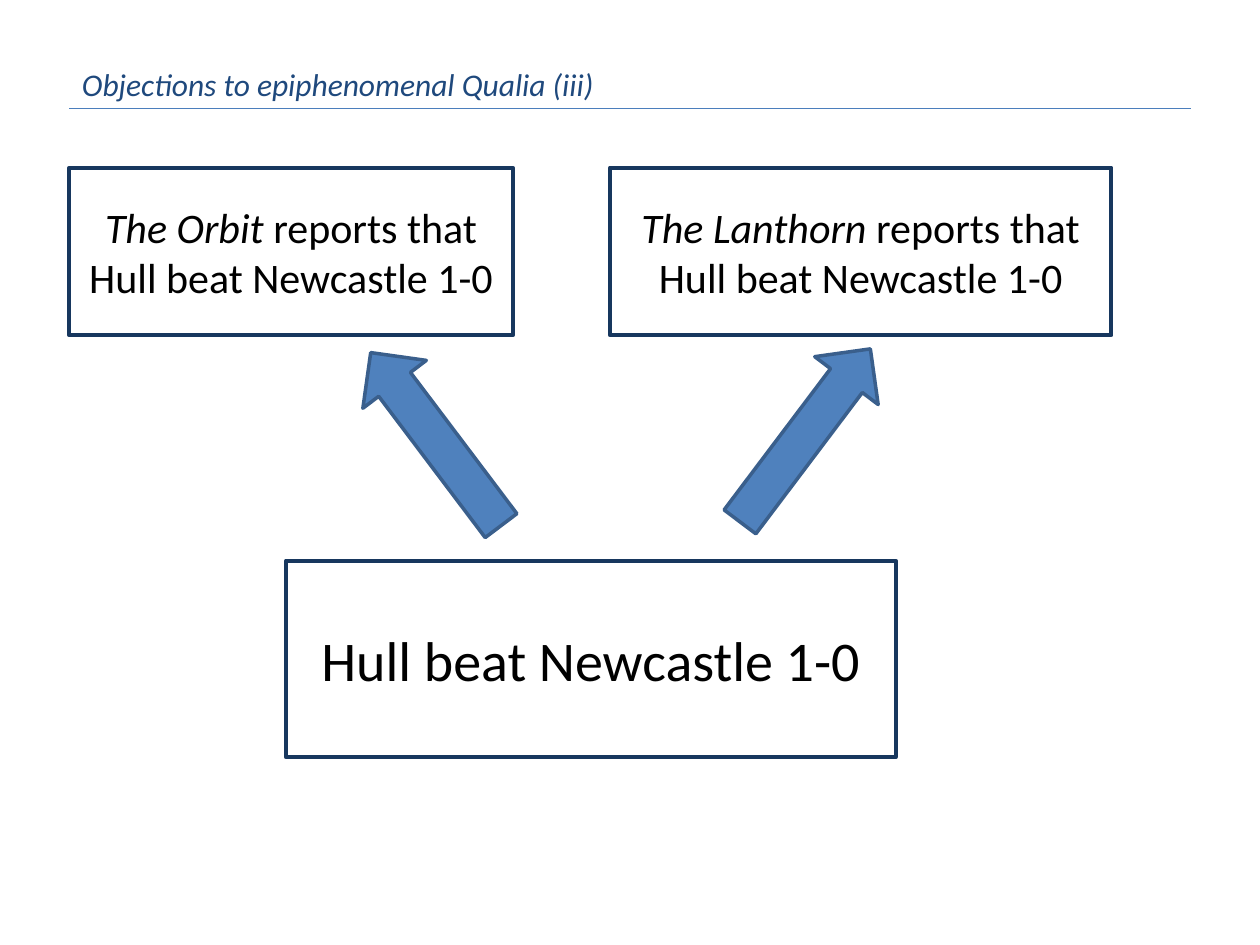
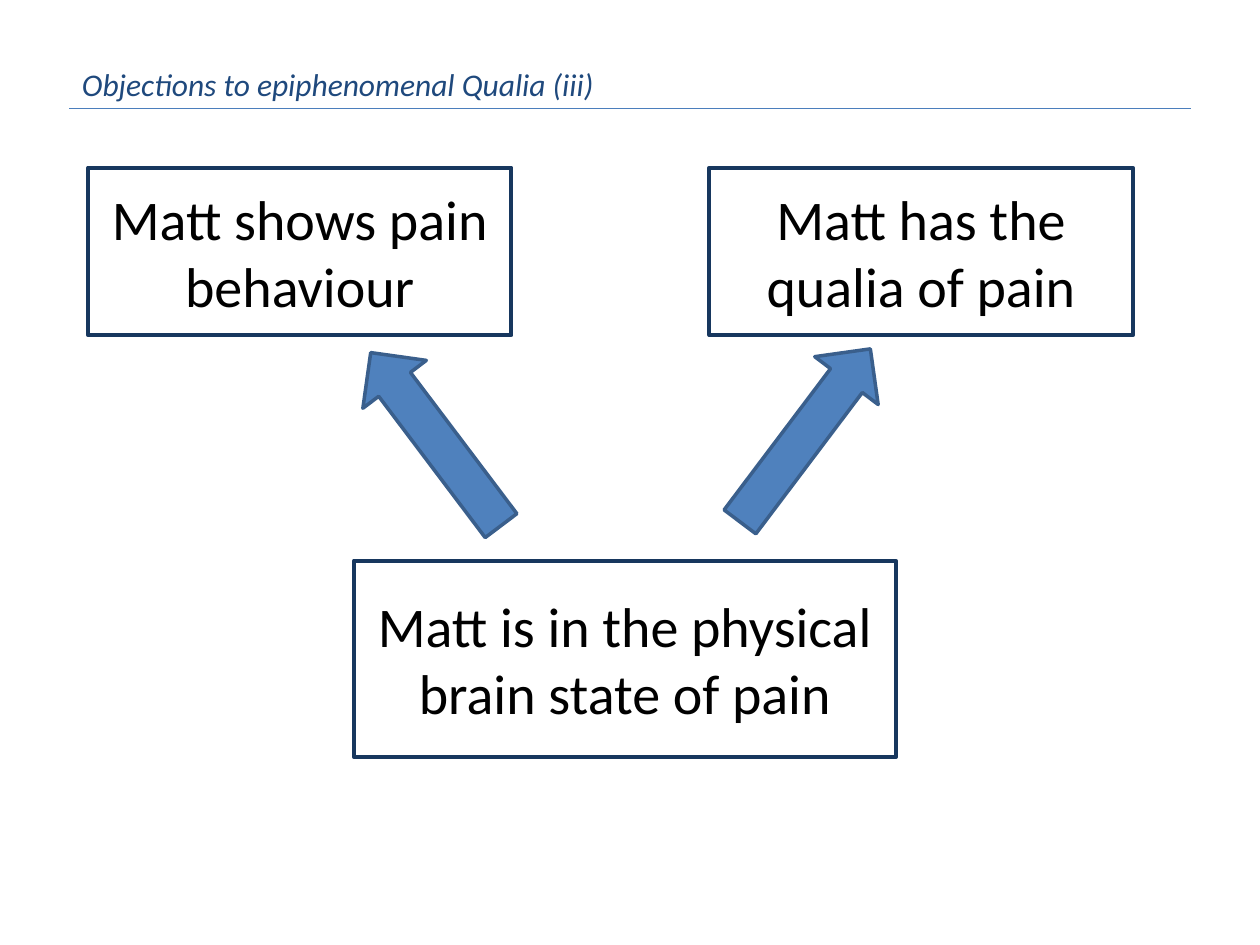
from lxml.etree import SubElement
from pptx import Presentation
from pptx.dml.color import RGBColor
from pptx.enum.shapes import MSO_CONNECTOR as Connector, MSO_SHAPE as Shape
from pptx.enum.text import MSO_ANCHOR as Anchor, MSO_AUTO_SIZE as AutoSize, PP_ALIGN as Align
from pptx.oxml.ns import qn
from pptx.util import Pt

TITLE = "Objections to epiphenomenal Qualia (iii)"
REPORT = " reports that Hull beat Newcastle 1-0"
SLIDES = [
    {
        "effect_size": 24,
        "effects": [
            (39.6, 253.4, [("The Orbit", True), (REPORT, False)]),
            (348.5, 286.6, [("The Lanthorn", True), (REPORT, False)]),
        ],
        "cause": (163.4, 348.5, [("Hull beat Newcastle 1-0", False)]),
    },
    {
        "effect_size": 32,
        "effects": [
            (50.4, 241.9, [("Matt shows pain behaviour", False)]),
            (405.4, 241.9, [("Matt has the qualia of pain", False)]),
        ],
        "cause": (202.3, 309.6, [("Matt is in the physical brain state of pain", False)]),
    },
]

FONT = "Calibri"
COLOURS = {
    "title": "1F497D", "rule": "4B7EBC", "box": "FFFFFF", "border": "17375E",
    "text": "000000", "arrow": "4F81BD", "arrow_edge": "3A5F8C",
}
MARGIN, RULE_TOP, SLIDE_WIDTH, SLIDE_HEIGHT = 39.6, 62, 720, 540
TITLE_TOP, TITLE_HEIGHT = 33.8, 29
EFFECT_TOP, EFFECT_HEIGHT = 95.8, 95.8
CAUSE_TOP, CAUSE_HEIGHT, CAUSE_SIZE = 320.4, 112.3, 32
ARROW_WIDTH, ARROW_HEIGHT = 123.8, 45.4
ARROWS = [(187.2, 228.2, 233), (398.2, 226.1, 307)]


def colour(name):
    return RGBColor.from_string(COLOURS[name])


def style_run(run, size, colour_name, italic):
    run.font.name = FONT
    run.font.size = Pt(size)
    run.font.italic = italic
    run.font.color.rgb = colour(colour_name)


def add_heading(slide):
    title = slide.shapes.title
    title.left, title.top = Pt(MARGIN), Pt(TITLE_TOP)
    title.width, title.height = Pt(SLIDE_WIDTH - 2 * MARGIN), Pt(TITLE_HEIGHT)
    frame = title.text_frame
    frame.text = TITLE
    frame.auto_size = AutoSize.NONE
    frame.vertical_anchor = Anchor.TOP
    paragraph = frame.paragraphs[0]
    paragraph.alignment = Align.LEFT
    style_run(paragraph.runs[0], 18, "title", True)

    rule = slide.shapes.add_connector(
        Connector.STRAIGHT, Pt(MARGIN), Pt(RULE_TOP), Pt(SLIDE_WIDTH - MARGIN), Pt(RULE_TOP))
    rule.line.color.rgb = colour("rule")
    rule.line.width = Pt(0.75)
    SubElement(rule._element.spPr, qn("a:effectLst"))


def add_shape(slide, kind, left, top, width, height, fill, edge, edge_width):
    shape = slide.shapes.add_shape(kind, Pt(left), Pt(top), Pt(width), Pt(height))
    shape.shadow.inherit = False
    shape.fill.solid()
    shape.fill.fore_color.rgb = colour(fill)
    shape.line.color.rgb = colour(edge)
    shape.line.width = Pt(edge_width)
    return shape


def add_box(slide, left, top, width, height, pieces, size):
    box = add_shape(slide, Shape.RECTANGLE, left, top, width, height, "box", "border", 2.25)
    frame = box.text_frame
    frame.word_wrap = True
    frame.vertical_anchor = Anchor.MIDDLE
    paragraph = frame.paragraphs[0]
    paragraph.alignment = Align.CENTER
    for text, italic in pieces:
        run = paragraph.add_run()
        run.text = text
        style_run(run, size, "text", italic)


def add_diagram(slide, content):
    left, width, pieces = content["cause"]
    add_box(slide, left, CAUSE_TOP, width, CAUSE_HEIGHT, pieces, CAUSE_SIZE)
    for left, width, pieces in content["effects"]:
        add_box(slide, left, EFFECT_TOP, width, EFFECT_HEIGHT, pieces, content["effect_size"])
    for left, top, angle in ARROWS:
        arrow = add_shape(slide, Shape.RIGHT_ARROW, left, top, ARROW_WIDTH, ARROW_HEIGHT,
                          "arrow", "arrow_edge", 2)
        arrow.rotation = angle


def main():
    """Build one cause-and-effects diagram per slide and save the deck."""
    presentation = Presentation()
    presentation.slide_width, presentation.slide_height = Pt(SLIDE_WIDTH), Pt(SLIDE_HEIGHT)
    title_only = presentation.slide_layouts.get_by_name("Title Only")
    for content in SLIDES:
        slide = presentation.slides.add_slide(title_only)
        add_heading(slide)
        add_diagram(slide, content)
    presentation.save("out.pptx")


if __name__ == "__main__":
    main()
